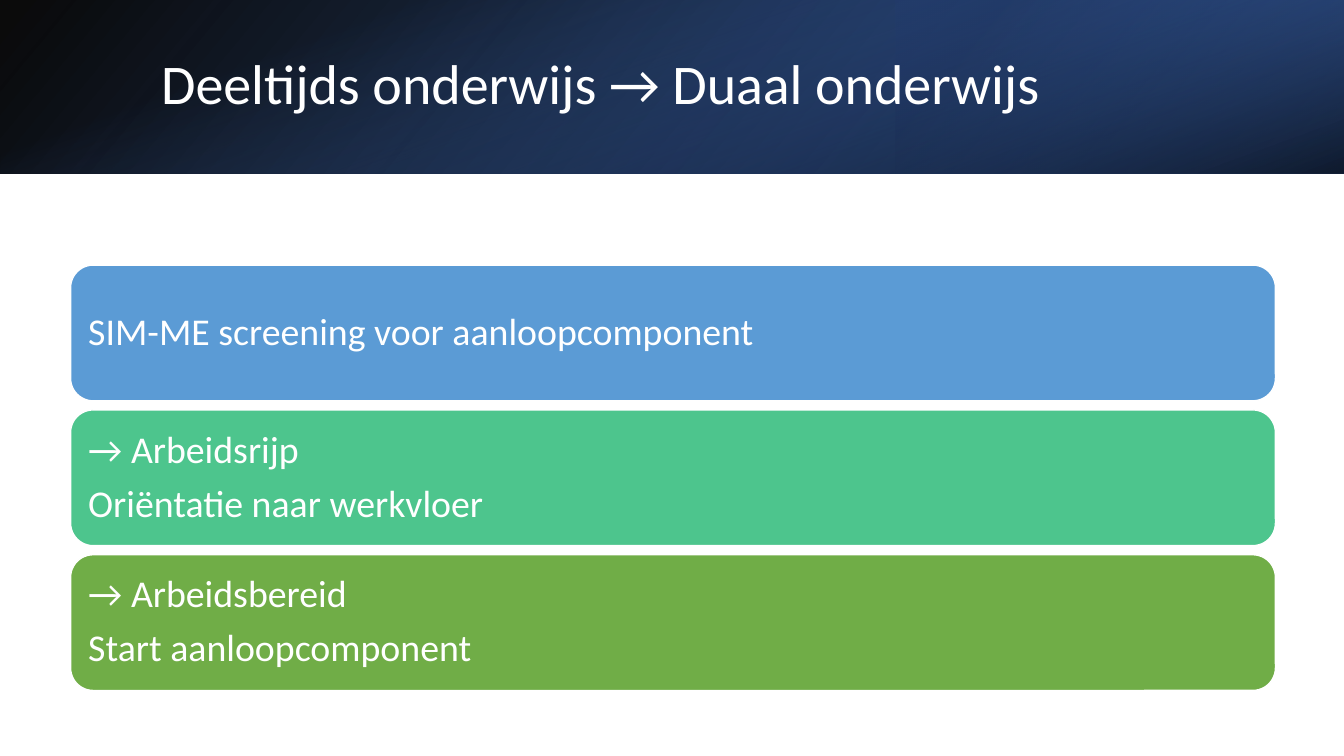
from lxml import etree
from pptx import Presentation
from pptx.dml.color import RGBColor
from pptx.enum.shapes import MSO_SHAPE
from pptx.enum.text import MSO_ANCHOR, PP_ALIGN
from pptx.oxml.ns import qn
from pptx.util import Inches, Pt

RECT = MSO_SHAPE.RECTANGLE
ROUNDED = MSO_SHAPE.ROUNDED_RECTANGLE
MIDDLE = MSO_ANCHOR.MIDDLE
LEFT = PP_ALIGN.LEFT

FONT = "Calibri"
COLORS = {
    "white": "FFFFFF",
    "black": "000000",
    "navy": "203864",
    "dark_blue": "2F5597",
    "blue": "4472C4",
    "sky": "5B9BD5",
    "mint": "4DC58D",
    "green": "70AD47",
}
STEPS = [
    ("sky", ["SIM-ME screening voor aanloopcomponent"]),
    ("mint", ["→ Arbeidsrijp", "Oriëntatie naar werkvloer"]),
    ("green", ["→ Arbeidsbereid", "Start aanloopcomponent"]),
]


def rgb(name):
    return RGBColor.from_string(COLORS[name])


def add_gradient(slide, box, stops, angle, rotation=0, flip=False):
    """Cover box with a gradient; stops are (position, color, opacity) in percent."""
    left, top, width, height = box
    if rotation == 90:
        left, top = left + (width - height) / 2, top + (height - width) / 2
        width, height = height, width
    sp = slide.shapes.add_shape(RECT, Inches(left), Inches(top), Inches(width), Inches(height))
    sp.shadow.inherit = False
    sp.line.fill.background()
    sp.rotation = rotation
    if flip:
        sp._element.spPr.find(qn("a:xfrm")).set("flipH", "1")
    sp.fill.gradient()
    sp.fill.gradient_angle = 360 - angle
    for stop, (position, color, _) in zip(sp.fill.gradient_stops, stops):
        stop.position = position / 100
        stop.color.rgb = rgb(color)
    # Opacity of each stop
    for gs, (_, _, opacity) in zip(sp._element.iter(qn("a:gs")), stops):
        etree.SubElement(gs[0], qn("a:alpha")).set("val", str(opacity * 1000))


def write_lines(tf, lines, size, space_after=0):
    tf.word_wrap = True
    tf.vertical_anchor = MIDDLE
    for i, line in enumerate(lines):
        p = tf.paragraphs[0] if i == 0 else tf.add_paragraph()
        p.text = line
        p.alignment = LEFT
        p.line_spacing = 0.9
        p.space_after = Pt(space_after)
        p.font.size = Pt(size)
        p.font.name = FONT
        p.font.color.rgb = rgb("white")


def add_header(slide, box, title):
    left, top, width, height = box
    third = width / 3
    # Layered gradients
    add_gradient(slide, box, [(0, "black", 96), (100, "dark_blue", 100)], 140, flip=True)
    add_gradient(slide, (left + 2 * third, top, third, height),
                 [(19, "navy", 68), (100, "blue", 79)], 320, rotation=180, flip=True)
    add_gradient(slide, box, [(23, "blue", 0), (99, "black", 74)], 340, rotation=90)
    # Title
    s = slide.shapes.add_textbox(Inches(left + 1.5), Inches(top + 0.38),
                                 Inches(width - 2.35), Inches(0.96))
    write_lines(s.text_frame, [title], 40)


def add_steps(slide, box, steps, gap=0.09):
    left, top, width, height = box
    step_height = (height - gap * (len(steps) - 1)) / len(steps)
    for i, (color, lines) in enumerate(steps):
        sp = slide.shapes.add_shape(ROUNDED, Inches(left), Inches(top + i * (step_height + gap)),
                                    Inches(width), Inches(step_height))
        sp.shadow.inherit = False
        sp.fill.solid()
        sp.fill.fore_color.rgb = rgb(color)
        sp.line.color.rgb = rgb("white")
        sp.line.width = Pt(1)
        tf = sp.text_frame
        tf.margin_left = tf.margin_right = tf.margin_top = tf.margin_bottom = Inches(0.11)
        write_lines(tf, lines, 27, space_after=9.45)


def main():
    prs = Presentation()
    prs.slide_width, prs.slide_height = Inches(13.33), Inches(7.5)
    slide = prs.slides.add_slide(prs.slide_layouts[6])
    add_header(slide, (0, 0, 13.33, 1.72), "Deeltijds onderwijs → Duaal onderwijs")
    add_steps(slide, (0.7, 2.63, 11.95, 4.22), STEPS)
    prs.save("out.pptx")


if __name__ == "__main__":
    main()
